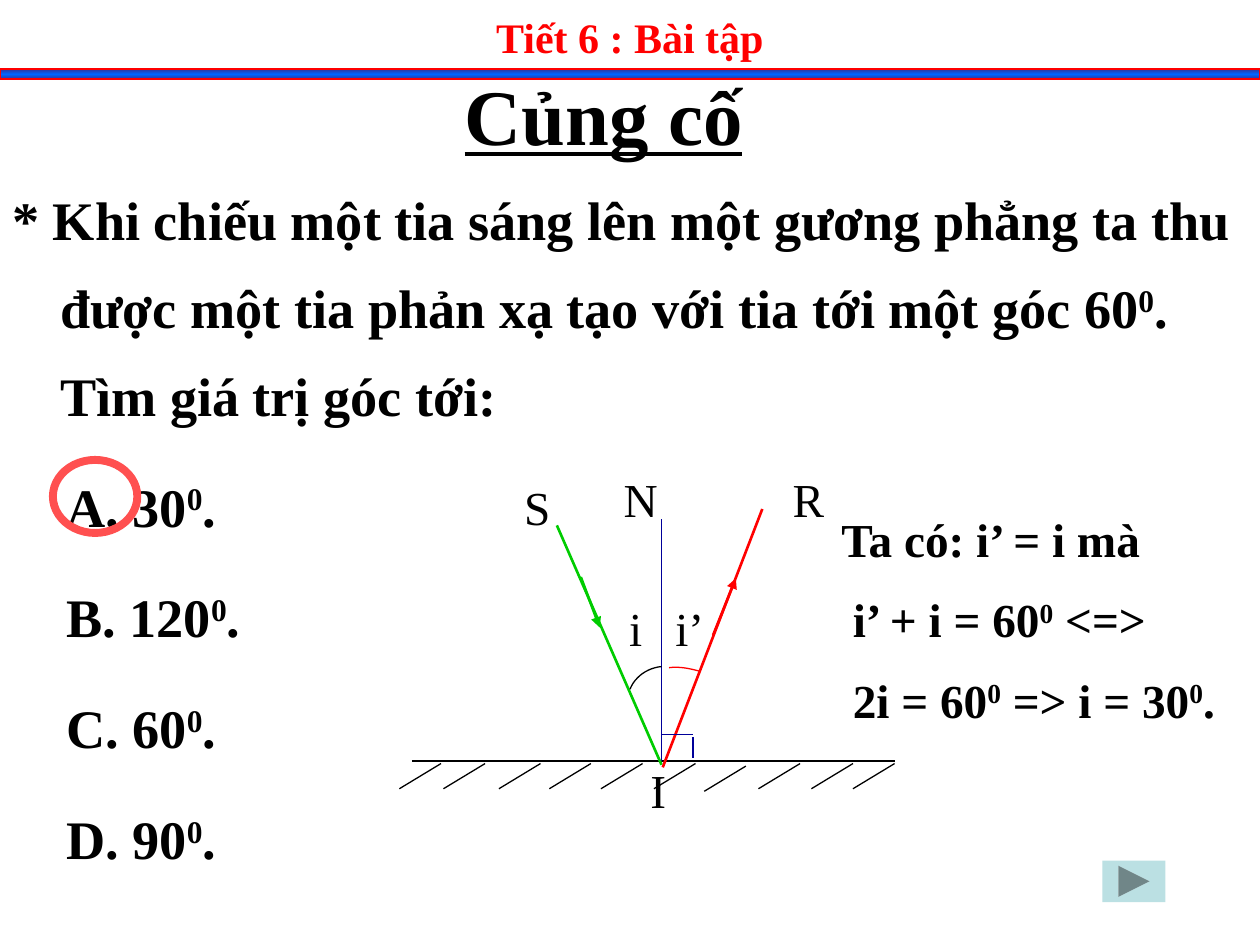
from copy import deepcopy

from pptx import Presentation
from pptx.dml.color import RGBColor
from pptx.enum.shapes import MSO_CONNECTOR, MSO_SHAPE
from pptx.enum.text import MSO_ANCHOR, PP_ALIGN
from pptx.oxml.ns import qn
from pptx.util import Inches, Pt
from lxml import etree

LEFT, CENTER = PP_ALIGN.LEFT, PP_ALIGN.CENTER
TOP, MIDDLE = MSO_ANCHOR.TOP, MSO_ANCHOR.MIDDLE
FONT = "Times New Roman"
BLACK = RGBColor(0x00, 0x00, 0x00)
RED = RGBColor(0xFF, 0x00, 0x00)
GREEN = RGBColor(0x00, 0xCC, 0x00)
NAVY = RGBColor(0x00, 0x00, 0x99)
RING = RGBColor(0xFF, 0x50, 0x50)
BUTTON = RGBColor(0xBB, 0xE0, 0xE3)
BAR_EDGE = RGBColor(0x33, 0x33, 0x99)
BAR_MIDDLE = RGBColor(0x00, 0x66, 0xFF)

# "^" raises the one character that follows it.
# Paragraphs: text, left margin, first-line indent, line spacing, space before
QUESTION = ("* Khi chiếu một tia sáng lên một gương phẳng ta thu được một tia "
            "phản xạ tạo với tia tới một góc 60^0. Tìm giá trị góc tới:")
ANSWERS = ["A. 30^0.", "B. 120^0.", "C. 60^0.", "D. 90^0."]
EXERCISE = [(QUESTION, 0.38, -0.38, 1.35, 0)]
EXERCISE += [(answer, 0.43, 0, 1.7, 0) for answer in ANSWERS]
SOLUTION = [
    ("Ta có: i’ = i mà", 0, 0, 1, 0),
    ("i’ + i = 60^0 <=>", 0.09, 0, 1, 13.5),
    ("2i = 60^0 => i = 30^0.", 0.09, 0, 1, 13.5),
]

POINT_LABELS = [("I", 5.06, 6.06), ("i", 4.88, 4.77), ("i’", 5.31, 4.77),
                ("S", 4.1, 3.81), ("N", 4.92, 3.75), ("R", 6.25, 3.75)]
HATCH_TOPS = [(3.5, 6.06), (3.85, 6.06), (4.29, 6.06), (4.69, 6.06), (5.1, 6.06),
              (5.52, 6.06), (5.92, 6.08), (6.35, 6.06), (6.77, 6.06), (7.1, 6.06)]
HATCH_RUN, HATCH_DROP = 0.33, 0.2
# Start, end, colour, width, arrowhead
MIRROR = ((3.27, 6.04), (7.1, 6.04), BLACK, 0.75, False)
RAYS = [
    ((5.25, 4.12), (5.25, 6.04), NAVY, 1, False),
    ((4.42, 4.17), (5.25, 6.07), GREEN, 1.5, False),
    ((4.61, 4.58), (4.76, 4.98), GREEN, 1.5, True),
    ((6.05, 4.04), (5.26, 6.09), RED, 1.5, False),
    ((5.66, 5.04), (5.84, 4.59), RED, 1.5, True),
    ((5.25, 5.83), (5.5, 5.83), NAVY, 0.75, False),
    ((5.5, 5.85), (5.5, 6.02), NAVY, 0.75, False),
]
# Cubic curve control points, colour
ANGLE_ARCS = [
    ([(5.25, 5.29), (5.14, 5.3), (5.04, 5.37), (5, 5.47)], BLACK),
    ([(5.56, 5.33), (5.46, 5.3), (5.37, 5.29), (5.31, 5.3)], RED),
]
ARC_STEPS = 12


def add_text(slide, box, paragraphs, size, color=BLACK, bold=False, underline=False,
             align=LEFT, anchor=TOP, inset=True, wrap=True):
    frame = slide.shapes.add_textbox(*map(Inches, box)).text_frame
    frame.word_wrap = wrap
    frame.vertical_anchor = anchor
    if not inset:
        frame.margin_left = frame.margin_right = 0
        frame.margin_top = frame.margin_bottom = 0
    for index, (text, margin, indent, spacing, before) in enumerate(paragraphs):
        paragraph = frame.add_paragraph() if index else frame.paragraphs[0]
        paragraph.alignment = align
        paragraph.line_spacing = spacing
        paragraph.space_before = Pt(before)
        properties = paragraph._p.get_or_add_pPr()
        properties.set("marL", str(Inches(margin)))
        properties.set("indent", str(Inches(indent)))
        first, *raised = text.split("^")
        pieces = [(first, False)]
        for part in raised:
            pieces += [(part[0], True), (part[1:], False)]
        for piece, superscript in pieces:
            if not piece:
                continue
            run = paragraph.add_run()
            run.text = piece
            font = run.font
            font.name, font.size, font.bold = FONT, Pt(size), bold
            font.underline = underline
            font.color.rgb = color
            if superscript:
                run._r.get_or_add_rPr().set("baseline", "30000")


def plain(text):
    return [(text, 0, 0, 1, 0)]


def add_line(slide, start, end, color, width, arrow):
    connector = slide.shapes.add_connector(
        MSO_CONNECTOR.STRAIGHT, *map(Inches, start + end))
    connector.line.color.rgb = color
    connector.line.width = Pt(width)
    if arrow:
        head = etree.SubElement(connector.line._get_or_add_ln(), qn("a:tailEnd"))
        head.set("type", "triangle")
    etree.SubElement(connector._element.spPr, qn("a:effectLst"))


def style_outline(shape, color, width):
    shape.shadow.inherit = False
    shape.line.color.rgb = color
    shape.line.width = Pt(width)


def curve_point(controls, t):
    weights = ((1 - t) ** 3, 3 * t * (1 - t) ** 2, 3 * t * t * (1 - t), t ** 3)
    return tuple(Inches(sum(w * c[axis] for w, c in zip(weights, controls)))
                 for axis in (0, 1))


def add_arc(slide, controls, color):
    points = [curve_point(controls, step / ARC_STEPS) for step in range(ARC_STEPS + 1)]
    builder = slide.shapes.build_freeform(*points[0])
    builder.add_line_segments(points[1:], close=False)
    arc = builder.convert_to_shape()
    arc.fill.background()
    style_outline(arc, color, 0.75)


def add_header(slide):
    add_text(slide, (0, 0, 10, 0.58), plain("Tiết 6 : Bài tập"), 24, color=RED,
             bold=True, align=CENTER, anchor=MIDDLE)
    bar = slide.shapes.add_shape(
        MSO_SHAPE.RECTANGLE, *map(Inches, (0, 0.55, 10, 0.08)))
    style_outline(bar, RED, 1)
    bar.fill.gradient()
    bar.fill.gradient_angle = 90
    stop_list = bar._element.spPr.find(qn("a:gradFill")).find(qn("a:gsLst"))
    stop_list.insert(1, deepcopy(stop_list[0]))
    stops = zip(bar.fill.gradient_stops, (0, 0.5, 1), (BAR_EDGE, BAR_MIDDLE, BAR_EDGE))
    for stop, position, color in stops:
        stop.position = position
        stop.color.rgb = color


def add_diagram(slide):
    hatches = [((x, y), (x - HATCH_RUN, y + HATCH_DROP), BLACK, 0.75, False)
               for x, y in HATCH_TOPS]
    for line in [MIRROR] + hatches + RAYS:
        add_line(slide, *line)
    for controls, color in ANGLE_ARCS:
        add_arc(slide, controls, color)
    for label, x, y in POINT_LABELS:
        add_text(slide, (x, y, 0.33, 0.42), plain(label), 27, align=CENTER,
                 anchor=MIDDLE, inset=False, wrap=False)


def main():
    deck = Presentation()
    deck.slide_width, deck.slide_height = Inches(10), Inches(7.5)
    slide = deck.slides.add_slide(deck.slide_layouts[6])

    add_text(slide, (0, 1.25, 10, 5.72), EXERCISE, 31, bold=True)
    answer_ring = slide.shapes.add_shape(
        MSO_SHAPE.OVAL, *map(Inches, (0.42, 3.65, 0.67, 0.58)))
    answer_ring.fill.background()
    style_outline(answer_ring, RING, 4.5)
    add_text(slide, (2, 0.48, 5.58, 0.85), plain("Củng cố"), 45, bold=True,
             underline=True, align=CENTER)
    next_button = slide.shapes.add_shape(
        MSO_SHAPE.ACTION_BUTTON_FORWARD_OR_NEXT, *map(Inches, (8.75, 6.83, 0.5, 0.33)))
    next_button.shadow.inherit = False
    next_button.fill.solid()
    next_button.fill.fore_color.rgb = BUTTON
    next_button.line.fill.background()
    add_text(slide, (6.58, 4, 3.42, 1.9), SOLUTION, 27, bold=True)
    add_diagram(slide)
    add_header(slide)
    deck.save("out.pptx")


if __name__ == "__main__":
    main()
